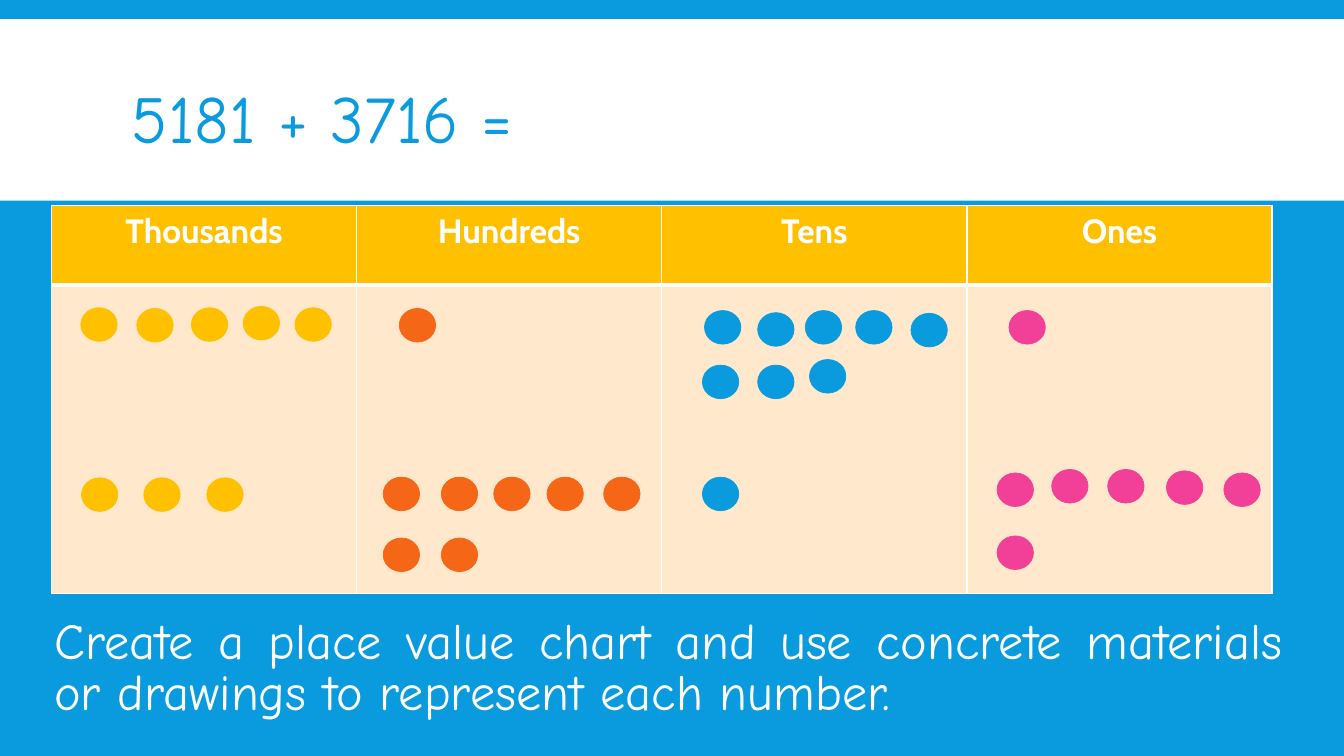
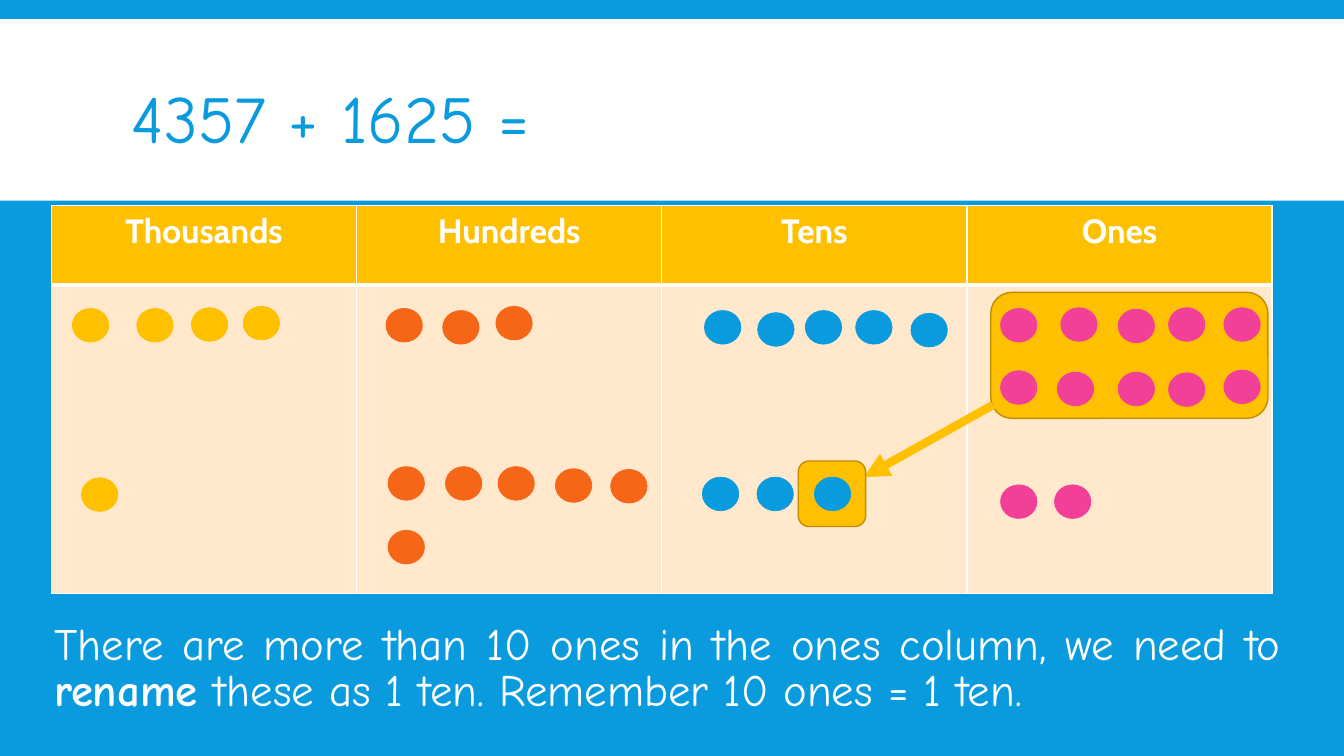
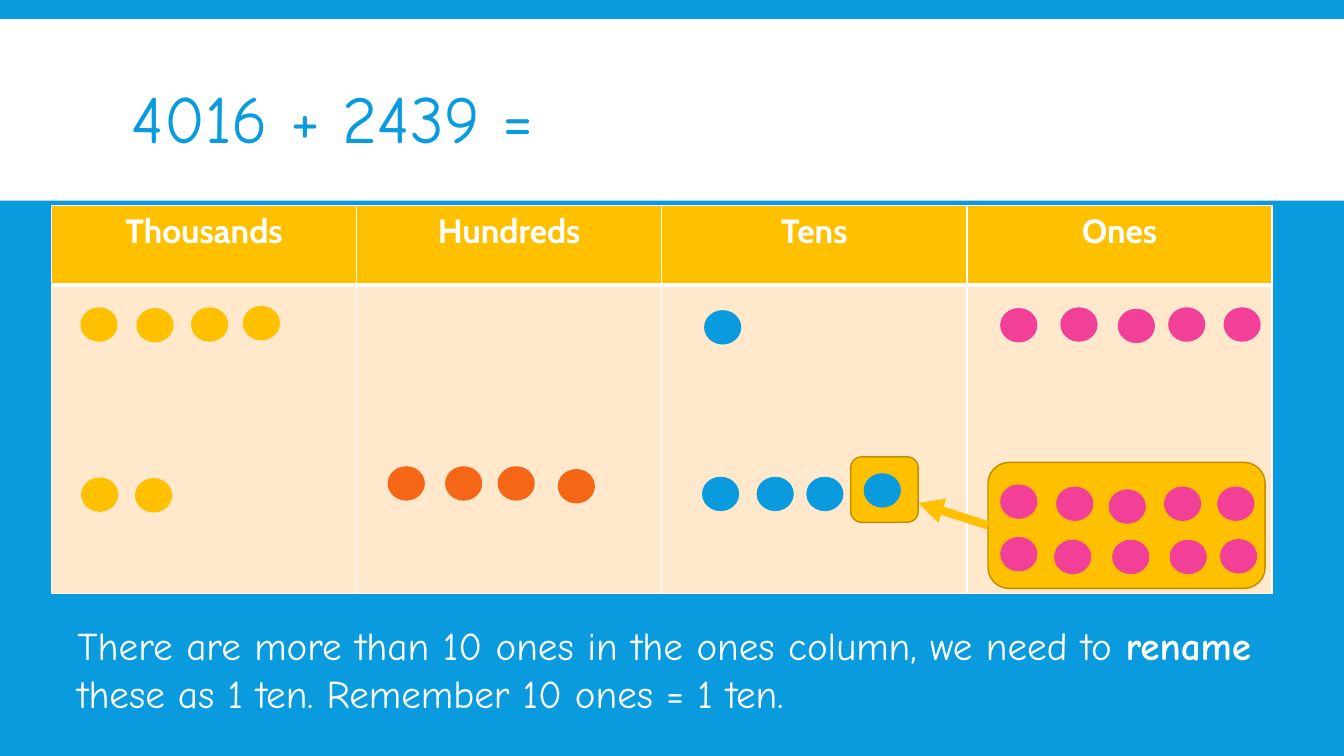
from dataclasses import dataclass

from lxml import etree
from pptx import Presentation
from pptx.dml.color import RGBColor
from pptx.enum.shapes import MSO_CONNECTOR, MSO_SHAPE
from pptx.enum.text import MSO_ANCHOR, PP_ALIGN
from pptx.oxml.ns import qn
from pptx.util import Pt

RECTANGLE = MSO_SHAPE.RECTANGLE
ROUNDED = MSO_SHAPE.ROUNDED_RECTANGLE
OVAL = MSO_SHAPE.OVAL
STRAIGHT = MSO_CONNECTOR.STRAIGHT
TOP, MIDDLE = MSO_ANCHOR.TOP, MSO_ANCHOR.MIDDLE
LEFT, CENTER, JUSTIFY = PP_ALIGN.LEFT, PP_ALIGN.CENTER, PP_ALIGN.JUSTIFY
LEFT_SIDE = 1


@dataclass(frozen=True)
class Theme:
    blue: str = "099BDD"
    white: str = "FFFFFF"
    gold: str = "FFC000"
    gold_edge: str = "BD8E00"
    cream: str = "FFE8CC"
    orange: str = "F56617"
    pink: str = "F24099"
    body_font: str = "Comic Neue"
    header_font: str = "Cabin"
    title_size: int = 48
    header_size: int = 24
    counter_edge: float = 0.5
    box_edge: float = 1
    arrow_width: float = 6
    tight_spacing: float = 0.85


THEME = Theme()
SLIDE_SIZE = (960, 540)
BAND_BOX = (0, 13.7, 960, 129.6)
TITLE_BOX = (87, 28, 770.4, 119)
BOARD_BOX = (36.7, 146.9, 872, 277.2)
HEADER_HEIGHT = 56.9
CAPTION_BOX = (31.7, 419, 891.4, 119)
LOW_CAPTION_BOX = (48.2, 440.6, 852.5, 75)
COUNTER_SIZE = (26, 24)

# Each place value column and the colour of its counters.
COLUMNS = {
    "Thousands": THEME.gold,
    "Hundreds": THEME.orange,
    "Tens": THEME.blue,
    "Ones": THEME.pink,
}

# Counter positions are measured from the top left of the column's body cell.
FOUR_THOUSANDS = [(21, 16), (61, 16.5), (100, 16), (137, 15)]
FIVE_TENS = [(30.5, 18), (68.5, 19.5), (102.5, 18), (138.5, 18), (178, 20)]
FIVE_ONES = [(24, 16.5), (67, 16), (108, 17), (144, 16), (183.5, 16)]
THREE_HUNDREDS = [(22.5, 129.5), (63.5, 129.5), (101, 129.5)]
TWO_TENS = [(29, 137), (68, 137)]

RENAME_RUNS = [
    ("There are more than 10 ones in the ones column, we need to ", False),
    ("rename ", True),
    ("these as 1 ten. Remember 10 ones = 1 ten.", False),
]

# Group boxes and arrow ends are measured from the top left of the board body.
LESSONS = [
    {
        "title": "5181 + 3716 =",
        "counters": {
            "Thousands": FOUR_THOUSANDS + [(174, 16)]
            + [(21.5, 137.5), (66, 137.5), (111, 137.5)],
            "Hundreds": [(30.5, 16.5), (19, 137), (60.5, 137), (98, 137),
                         (136, 137), (176.5, 137), (19, 180.5), (60.5, 180.5)],
            "Tens": FIVE_TENS + [(29, 57), (68.5, 57), (105.5, 53), (29, 137)],
            "Ones": [(30, 18), (21.5, 134), (60.5, 131.5), (100.5, 131.5),
                     (142.5, 132.5), (183.5, 134), (21.5, 179)],
        },
        "caption": {
            "box": CAPTION_BOX, "size": 36,
            "runs": [("Create a place value chart and use concrete materials or "
                      "drawings to represent each number.", False)],
        },
    },
    {
        "title": "4357 + 1625 =",
        "counters": {
            "Thousands": [(15, 16.5)] + FOUR_THOUSANDS[1:] + [(21.5, 137.5)],
            "Hundreds": [(21, 16.5), (61.5, 18), (99.5, 15)] + THREE_HUNDREDS
            + [(142, 131), (181.5, 131.5), (22.5, 175)],
            "Tens": FIVE_TENS + TWO_TENS + [(109, 137)],
            "Ones": FIVE_ONES
            + [(24, 61), (64.5, 62), (108, 62), (144, 62.5), (183.5, 60.5)]
            + [(24, 142.5), (62.5, 142.5)],
        },
        "renaming": {
            "ones": (671, 5, 198, 90),
            "ten": (533.5, 125.5, 48.2, 46.8),
            "arrow": ((672.5, 85.5), (580.5, 137)),
        },
        "caption": {"box": CAPTION_BOX, "size": 32, "runs": RENAME_RUNS},
    },
    {
        "title": "4016 + 2439 =",
        "counters": {
            "Thousands": FOUR_THOUSANDS + [(21.5, 137.5), (60, 138)],
            "Hundreds": THREE_HUNDREDS + [(144, 131.5)],
            "Tens": FIVE_TENS[:1] + TWO_TENS + [(103.5, 137), (144.5, 134.5)],
            "Ones": FIVE_ONES
            + [(24, 142.5), (64, 144), (101.5, 146), (141, 144), (179, 144)]
            + [(24, 180), (62.5, 182), (104, 182), (145, 182), (181, 181.5)],
        },
        "renaming": {
            "ones": (669, 126.5, 198, 90),
            "ten": (571, 122.5, 48.2, 46.8),
            "arrow": ((669, 171.5), (619.2, 155.5)),
        },
        "caption": {
            "box": LOW_CAPTION_BOX, "size": 28, "runs": RENAME_RUNS,
            "anchor": TOP, "spacing": 1.0,
        },
    },
]


def colour(value):
    return RGBColor.from_string(value)


def points(values):
    return [Pt(value) for value in values]


def add_block(slide, kind, box, fill, edge=None, edge_width=0):
    shape = slide.shapes.add_shape(kind, *points(box))
    shape.shadow.inherit = False
    shape.fill.solid()
    shape.fill.fore_color.rgb = colour(fill)
    if edge:
        shape.line.color.rgb = colour(edge)
        shape.line.width = Pt(edge_width)
    else:
        shape.line.fill.background()
    return shape


def add_run(paragraph, text, ink, **font_format):
    run = paragraph.add_run()
    run.text = text
    run.font.color.rgb = colour(ink)
    for name, value in font_format.items():
        setattr(run.font, name, value)


def add_text(slide, box, runs, size, ink, alignment=LEFT, anchor=MIDDLE,
             spacing=THEME.tight_spacing):
    """Add one wrapped paragraph made of (text, bold) runs."""
    frame = slide.shapes.add_textbox(*points(box)).text_frame
    frame.word_wrap = True
    frame.vertical_anchor = anchor
    paragraph = frame.paragraphs[0]
    paragraph.alignment = alignment
    paragraph.line_spacing = spacing
    for text, bold in runs:
        add_run(paragraph, text, ink, name=THEME.body_font, size=Pt(size), bold=bold)


def add_heading(slide, title):
    add_block(slide, RECTANGLE, BAND_BOX, THEME.white)
    add_text(slide, TITLE_BOX, [(title, False)], THEME.title_size, THEME.blue)


def style_cell(cell, fill, top, bottom):
    """Fill a cell and give it white borders of the given widths."""
    cell.fill.solid()
    cell.fill.fore_color.rgb = colour(fill)
    properties = cell._tc.get_or_add_tcPr()
    borders = {"a:lnL": 1, "a:lnR": 1, "a:lnT": top, "a:lnB": bottom}
    for position, (tag, width) in enumerate(borders.items()):
        line = etree.Element(qn(tag), w=str(Pt(width)))
        solid = etree.SubElement(line, qn("a:solidFill"))
        etree.SubElement(solid, qn("a:srgbClr"), val=THEME.white)
        properties.insert(position, line)


def add_board(slide, box):
    """Add the place value table."""
    table = slide.shapes.add_table(2, len(COLUMNS), *points(box)).table
    table.first_row = table.horz_banding = False
    table.rows[0].height = Pt(HEADER_HEIGHT)
    table.rows[1].height = Pt(box[3] - HEADER_HEIGHT)
    for index, label in enumerate(COLUMNS):
        table.columns[index].width = Pt(box[2] / len(COLUMNS))
        header, body = table.cell(0, index), table.cell(1, index)
        style_cell(header, THEME.gold, top=1, bottom=3)
        style_cell(body, THEME.cream, top=3, bottom=1)
        paragraph = header.text_frame.paragraphs[0]
        paragraph.alignment = CENTER
        add_run(paragraph, label, THEME.white, name=THEME.header_font,
                size=Pt(THEME.header_size), bold=True)


def add_counters(slide, box, counters):
    left, top, width, _ = box
    for index, (label, fill) in enumerate(COLUMNS.items()):
        column_left = left + index * width / len(COLUMNS)
        for across, down in counters[label]:
            place = (column_left + across, top + down, *COUNTER_SIZE)
            add_block(slide, OVAL, place, fill, fill, THEME.counter_edge)


def add_arrow(slide, start, end):
    arrow = slide.shapes.add_connector(STRAIGHT, *points(start + end))
    arrow.line.color.rgb = colour(THEME.gold)
    arrow.line.width = Pt(THEME.arrow_width)
    etree.SubElement(arrow.line._get_or_add_ln(), qn("a:tailEnd"), type="triangle")
    etree.SubElement(arrow._element.spPr, qn("a:effectLst"))
    return arrow


def add_renaming(slide, box, renaming):
    """Frame ten ones and the new ten, with an arrow between them."""
    left, top = box[:2]

    def add_frame(name):
        across, down, width, height = renaming[name]
        return add_block(slide, ROUNDED, (left + across, top + down, width, height),
                         THEME.gold, THEME.gold_edge, THEME.box_edge)

    ones = add_frame("ones")
    start, end = [(left + across, top + down) for across, down in renaming["arrow"]]
    arrow = add_arrow(slide, start, end)
    across, down, _, height = renaming["ones"]
    if renaming["arrow"][0] == (across, down + height / 2):
        arrow.begin_connect(ones, LEFT_SIDE)
    add_frame("ten")


def add_lesson(presentation, lesson):
    slide = presentation.slides.add_slide(presentation.slide_layouts[6])
    add_heading(slide, lesson["title"])
    add_board(slide, BOARD_BOX)
    left, top, width, height = BOARD_BOX
    body_box = (left, top + HEADER_HEIGHT, width, height - HEADER_HEIGHT)
    if "renaming" in lesson:
        add_renaming(slide, body_box, lesson["renaming"])
    add_counters(slide, body_box, lesson["counters"])
    add_text(slide, ink=THEME.white, alignment=JUSTIFY, **lesson["caption"])


def main():
    presentation = Presentation()
    presentation.slide_width, presentation.slide_height = points(SLIDE_SIZE)
    background = presentation.slide_master.background.fill
    background.solid()
    background.fore_color.rgb = colour(THEME.blue)
    for lesson in LESSONS:
        add_lesson(presentation, lesson)
    presentation.save("out.pptx")


if __name__ == "__main__":
    main()
